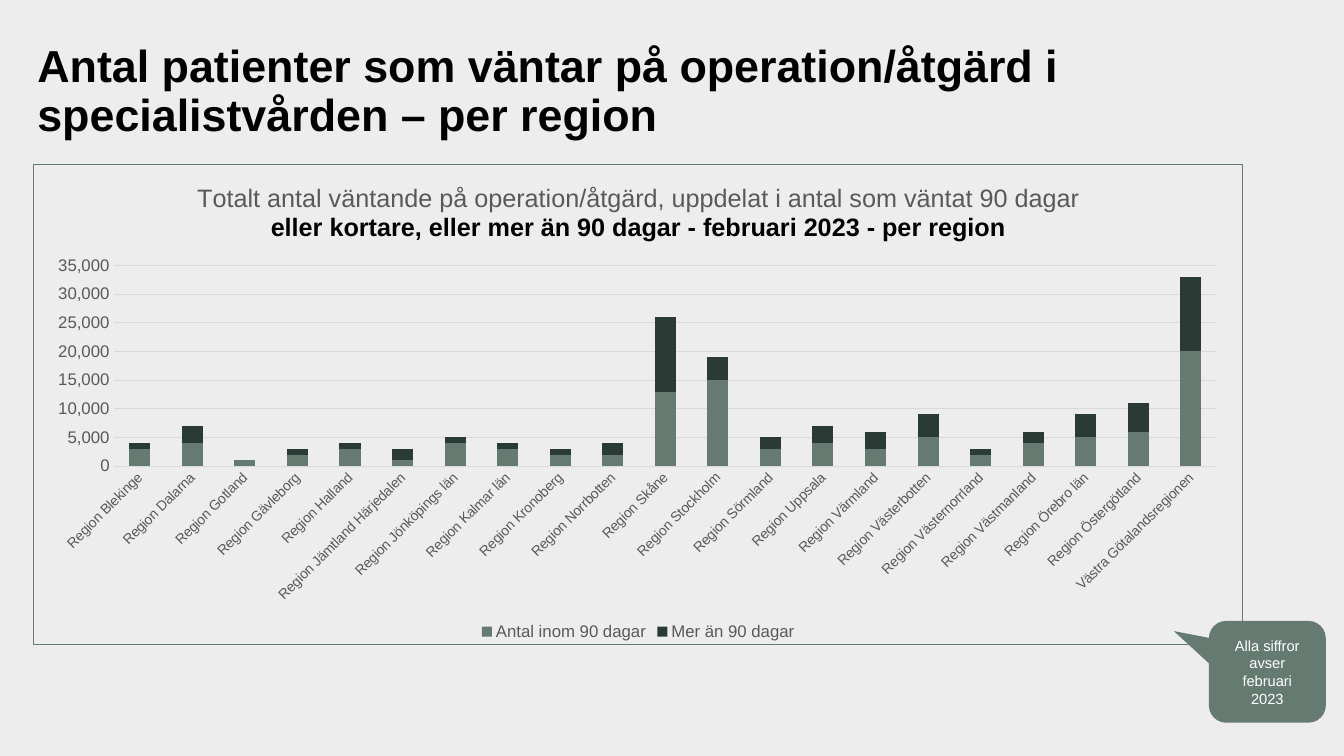
"""Build a slide with a stacked column chart of patients waiting per region."""
from lxml.etree import SubElement
from pptx import Presentation
from pptx.chart.data import CategoryChartData
from pptx.dml.color import RGBColor
from pptx.enum.chart import XL_CHART_TYPE, XL_LEGEND_POSITION, XL_TICK_MARK
from pptx.enum.shapes import MSO_SHAPE
from pptx.enum.text import MSO_ANCHOR, PP_ALIGN
from pptx.oxml import parse_xml
from pptx.oxml.ns import nsdecls, qn
from pptx.util import Inches, Pt

GREEN, DARK, GREY, RULE = "657B71", "2A3B36", "595959", "D9D9D9"


def paint(color, tone):
    color.rgb = RGBColor.from_string(tone)


def style(font, size, tone, bold=False):
    for key, value in {"name": "Arial", "size": Pt(size), "bold": bold}.items():
        setattr(font, key, value)
    paint(font.color, tone)


deck = Presentation()
deck.slide_width, deck.slide_height = Inches(13.33), Inches(7.5)
slide = deck.slides.add_slide(deck.slide_layouts[5])
fill = slide.background.fill
fill.solid()
paint(fill.fore_color, "EDEDED")

title = slide.shapes.title
place = {"left": 0.37, "top": 0.19, "width": 10.89, "height": 1.21}
for key, value in place.items():
    setattr(title, key, Inches(value))
frame = title.text_frame
frame.text = "Antal patienter som väntar på operation/åtgärd i specialistvården – per region"
margins = ["margin_left", "margin_top", "margin_right", "margin_bottom"]
form = {"word_wrap": True, "vertical_anchor": MSO_ANCHOR.BOTTOM, **dict.fromkeys(margins, 0)}
for key, value in form.items():
    setattr(frame, key, value)
head = frame.paragraphs[0]
head.alignment, head.line_spacing = PP_ALIGN.LEFT, 0.9
style(head.runs[0].font, 32, "000000", True)

rows = [
    ("Region Blekinge", 3000, 1000),
    ("Region Dalarna", 4000, 3000),
    ("Region Gotland", 1000, 0),
    ("Region Gävleborg", 2000, 1000),
    ("Region Halland", 3000, 1000),
    ("Region Jämtland Härjedalen", 1000, 2000),
    ("Region Jönköpings län", 4000, 1000),
    ("Region Kalmar län", 3000, 1000),
    ("Region Kronoberg", 2000, 1000),
    ("Region Norrbotten", 2000, 2000),
    ("Region Skåne", 13000, 13000),
    ("Region Stockholm", 15000, 4000),
    ("Region Sörmland", 3000, 2000),
    ("Region Uppsala", 4000, 3000),
    ("Region Värmland", 3000, 3000),
    ("Region Västerbotten", 5000, 4000),
    ("Region Västernorrland", 2000, 1000),
    ("Region Västmanland", 4000, 2000),
    ("Region Örebro län", 5000, 4000),
    ("Region Östergötland", 6000, 5000),
    ("Västra Götalandsregionen", 20000, 13000),
]
names, within, over = zip(*rows)
data = CategoryChartData(number_format="#,##0")
data.categories = names
data.add_series("Antal inom 90 dagar", within)
data.add_series("Mer än 90 dagar", over)
chart = slide.shapes.add_chart(
    XL_CHART_TYPE.COLUMN_STACKED, Inches(0.33), Inches(1.63), Inches(12), Inches(4.77), data
).chart
style(chart.font, 10, "000000")

chart.has_title = True
text = chart.chart_title.text_frame
text.text = "Totalt antal väntande på operation/åtgärd, uppdelat i antal som väntat 90 dagar"
more = text.add_paragraph()
more.text = "eller kortare, eller mer än 90 dagar - februari 2023 - per region"
style(text.paragraphs[0].runs[0].font, 18, GREY)
style(more.runs[0].font, 18, "000000", True)
chart.chart_title.include_in_layout = False

plot = chart.plots[0]
for key, value in {"gap_width": 150, "overlap": 100, "vary_by_categories": False}.items():
    setattr(plot, key, value)
for series, tone in zip(plot.series, [GREEN, DARK]):
    series.format.fill.solid()
    paint(series.format.fill.fore_color, tone)

cats, vals = chart.category_axis, chart.value_axis
for axis, size in [(cats, 10), (vals, 12)]:
    axis.major_tick_mark = axis.minor_tick_mark = XL_TICK_MARK.NONE
    style(axis.tick_labels.font, size, GREY)
scale = {"minimum_scale": 0, "maximum_scale": 35000, "major_unit": 5000}
for key, value in scale.items():
    setattr(vals, key, value)
vals.tick_labels.number_format = "#,##0"
vals.tick_labels.number_format_is_linked = False
vals.format.line.fill.background()
for line in [cats.format.line, vals.major_gridlines.format.line]:
    line.width = Pt(0.75)
    paint(line.color, RULE)
cats.tick_labels.font
turn = cats._element.find(qn("c:txPr")).find(qn("a:bodyPr"))
turn.set("rot", "-2700000")
turn.set("vert", "horz")

chart.has_legend = True
legend = chart.legend
legend.position, legend.include_in_layout = XL_LEGEND_POSITION.BOTTOM, False
style(legend.font, 12, GREY)

area = chart._chartSpace.chart.plotArea
for old in area.findall(qn("c:layout")):
    area.remove(old)
layout = parse_xml(f"<c:layout {nsdecls('c')}/>")
area.insert(0, layout)
inner = SubElement(layout, qn("c:manualLayout"))
parts = {"layoutTarget": "inner", "xMode": "edge", "yMode": "edge",
         "x": "0.066", "y": "0.21", "w": "0.913", "h": "0.418"}
for key, value in parts.items():
    SubElement(inner, qn(f"c:{key}")).set("val", value)

chart._chartSpace.chart.addnext(parse_xml(
    f'<c:spPr {nsdecls("c", "a")}><a:noFill/><a:ln w="9525"><a:solidFill>'
    f'<a:srgbClr val="{GREEN}"/></a:solidFill></a:ln></c:spPr>'
))

note = slide.shapes.add_shape(
    MSO_SHAPE.ROUNDED_RECTANGULAR_CALLOUT, Inches(11.99), Inches(6.16), Inches(1.16), Inches(1.01)
)
note.shadow.inherit = False
for spot, value in enumerate([-0.8, -0.4, 0.17]):
    note.adjustments[spot] = value
note.fill.solid()
paint(note.fill.fore_color, GREEN)
note.line.fill.background()
frame = note.text_frame
frame.word_wrap, frame.vertical_anchor = True, MSO_ANCHOR.MIDDLE
frame.text = "Alla siffror avser\nfebruari\n2023"
for para in frame.paragraphs:
    para.alignment = PP_ALIGN.CENTER
    style(para.runs[0].font, 10.5, "FFFFFF")

deck.save("out.pptx")
